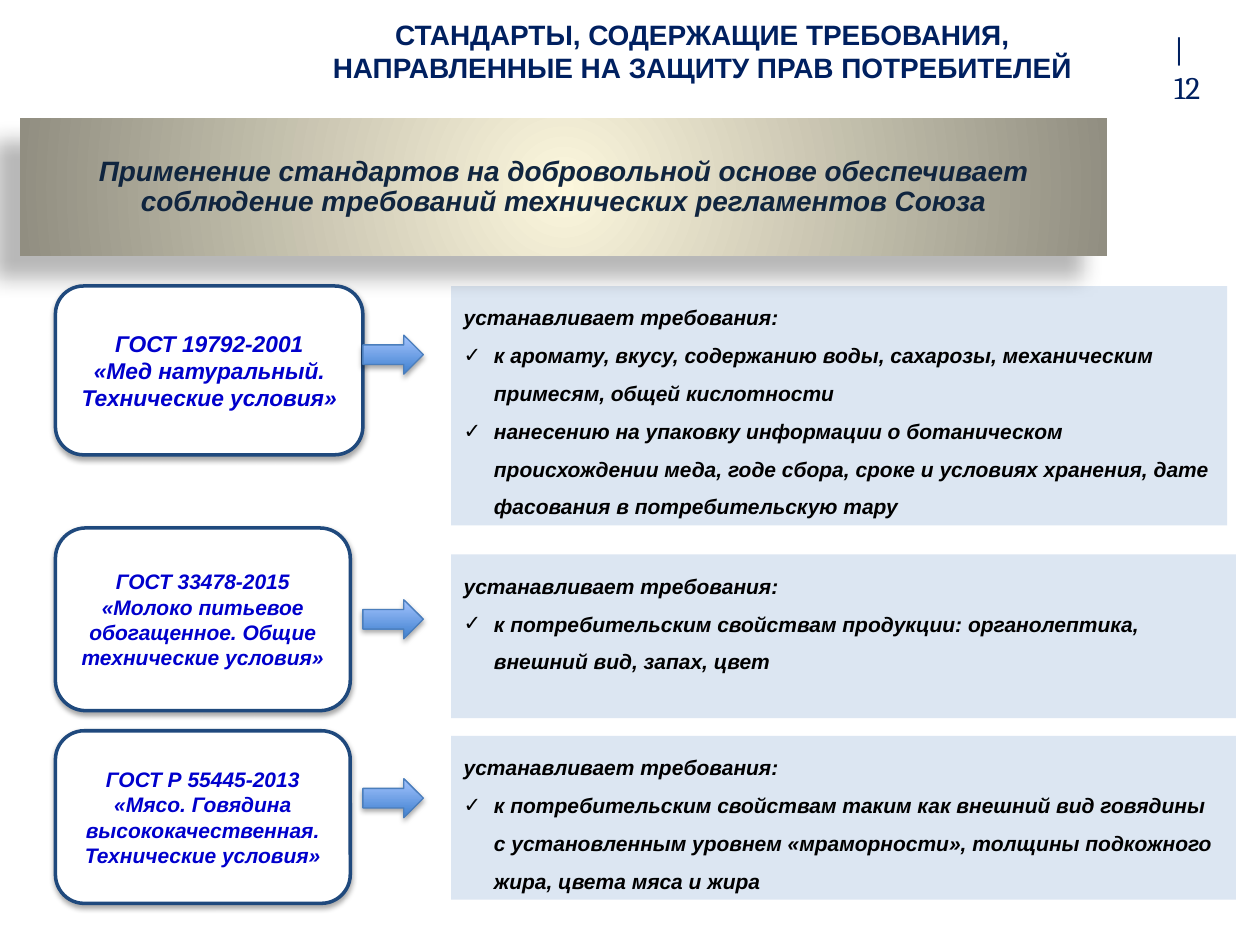
"""Build a slide on standards that protect consumer rights."""
from dataclasses import dataclass

from lxml import etree
from pptx import Presentation
from pptx.dml.color import RGBColor
from pptx.enum import shapes, text
from pptx.oxml import ns
from pptx.util import Inches, Pt


@dataclass(frozen=True)
class Theme:
    """Colours, fonts and type sizes."""
    navy: str = "002060"
    banner_text: str = "10253F"
    banner_stops: tuple[str, str] = ("FCF7DD", "918E81")
    card_fill: str = "FFFFFF"
    card_line: str = "1F497D"
    card_text: str = "0000CC"
    arrow_stops: tuple[str, str] = ("3F80CE", "A4C4FF")
    arrow_line: str = "4B7EBC"
    panel_fill: str = "DCE6F2"
    panel_text: str = "000000"
    font: str = "Arial"
    number_font: str = "Cambria"
    heading_size: int = 16
    number_size: int = 18
    body_size: int = 12


@dataclass(frozen=True)
class Box:
    """Position and size in inches."""
    left: float
    top: float
    width: float
    height: float

    def lengths(self) -> tuple:
        """Return the four lengths for a shape call."""
        return tuple(map(Inches, (self.left, self.top, self.width, self.height)))


@dataclass(frozen=True)
class Shadow:
    """Outer shadow: opacity in percent, lengths in points, angle in degrees."""
    alpha: int
    blur: float
    distance: float
    angle: int


@dataclass(frozen=True)
class Standard:
    """One standard with the requirements it sets."""
    name: list[str]
    name_size: int
    card: Box
    arrow_top: float
    panel: Box
    placeholder: int
    requirements: list[str]


THEME = Theme()
SOFT = Shadow(35, 3.1, 1.8, 90)
DEEP = Shadow(28, 11.8, 19.7, 141)
INTRO = "устанавливает требования:"
STANDARDS = [
    Standard(
        ["ГОСТ 19792-2001", "«Мед натуральный.", "Технические условия»"], 13,
        Box(0.44, 2.27, 2.44, 1.34), 2.66, Box(3.58, 2.27, 6.16, 1.9), 1,
        ["к аромату, вкусу, содержанию воды, сахарозы, механическим примесям, общей кислотности",
         "нанесению на упаковку информации о ботаническом происхождении меда, годе сбора, "
         "сроке и условиях хранения, дате фасования в потребительскую тару"]),
    Standard(
        ["ГОСТ 33478-2015 «Молоко питьевое обогащенное. Общие технические условия»"], 12,
        Box(0.44, 4.19, 2.34, 1.45), 4.76, Box(3.58, 4.4, 6.23, 1.3), 2,
        ["к потребительским свойствам продукции: органолептика, внешний вид, запах, цвет"]),
    Standard(
        ["ГОСТ Р 55445-2013 «Мясо. Говядина высококачественная. Технические условия»"], 12,
        Box(0.44, 5.8, 2.34, 1.37), 6.18, Box(3.58, 5.84, 6.23, 1.3), 3,
        ["к потребительским свойствам таким как внешний вид говядины с установленным уровнем "
         "«мраморности», толщины подкожного жира, цвета мяса и жира"]),
]


def set_bullet(paragraph, bullet: str | None) -> None:
    """Give a paragraph a hanging bullet, or none."""
    properties = paragraph._p.get_or_add_pPr()
    indent = Inches(0.24) if bullet else 0
    properties.set("marL", str(indent))
    properties.set("indent", str(-indent))
    if bullet:
        etree.SubElement(properties, ns.qn("a:buChar"), char=bullet)
    else:
        etree.SubElement(properties, ns.qn("a:buNone"))


def write(shape, lines: list[str], *, size: int, color: str, font: str = THEME.font,
          bold: bool = True, italic: bool = False, align=text.PP_ALIGN.CENTER,
          anchor=text.MSO_ANCHOR.MIDDLE, spacing: float = 1.0,
          bullet: str | None = None) -> None:
    """Fill a shape with paragraphs; a bullet marks all but the first."""
    frame = shape.text_frame
    frame.word_wrap = True
    frame.auto_size = text.MSO_AUTO_SIZE.NONE
    frame.vertical_anchor = anchor
    for index, line in enumerate(lines):
        paragraph = frame.add_paragraph() if index else frame.paragraphs[0]
        paragraph.text = line
        paragraph.alignment = align
        paragraph.line_spacing = spacing
        paragraph.space_before = paragraph.space_after = Pt(0)
        set_bullet(paragraph, bullet if index else None)
        for run in paragraph.runs:
            run.font.name = font
            run.font.size = Pt(size)
            run.font.bold = bold
            run.font.italic = italic
            run.font.color.rgb = RGBColor.from_string(color)


def place(shape, box: Box) -> None:
    """Move and size a placeholder."""
    shape.left, shape.top, shape.width, shape.height = box.lengths()


def fill_solid(shape, color: str) -> None:
    """Fill a shape with one colour."""
    shape.fill.solid()
    shape.fill.fore_color.rgb = RGBColor.from_string(color)


def fill_gradient(shape, colors: tuple[str, str], *, radial: bool = False) -> None:
    """Fill a shape with an upward or a radial gradient."""
    shape.fill.gradient()
    for stop, color in zip(shape.fill.gradient_stops, colors):
        stop.color.rgb = RGBColor.from_string(color)
    if not radial:
        shape.fill.gradient_angle = 90
        return
    gradient = shape._element.spPr.find(ns.qn("a:gradFill"))
    gradient.remove(gradient.find(ns.qn("a:lin")))
    circle = etree.SubElement(gradient, ns.qn("a:path"), path="circle")
    etree.SubElement(circle, ns.qn("a:fillToRect"), dict.fromkeys("ltrb", "50000"))


def add_shape(slide, kind, box: Box, shadow: Shadow, line: str | None = None,
              line_width: float = 1):
    """Add a preset shape with an outline and an outer shadow."""
    shape = slide.shapes.add_shape(kind, *box.lengths())
    if line:
        shape.line.color.rgb = RGBColor.from_string(line)
        shape.line.width = Pt(line_width)
    else:
        shape.line.fill.background()
    shape.shadow.inherit = False
    effects = shape._element.spPr.find(ns.qn("a:effectLst"))
    outer = etree.SubElement(
        effects, ns.qn("a:outerShdw"), blurRad=str(Pt(shadow.blur)),
        dist=str(Pt(shadow.distance)), dir=str(shadow.angle * 60000), rotWithShape="0")
    color = etree.SubElement(outer, ns.qn("a:srgbClr"), val="000000")
    etree.SubElement(color, ns.qn("a:alpha"), val=str(shadow.alpha * 1000))
    return shape


def add_standard(slide, standard: Standard) -> None:
    """Draw a standard's card, arrow and list of requirements."""
    card = add_shape(slide, shapes.MSO_SHAPE.ROUNDED_RECTANGLE, standard.card, SOFT,
                     THEME.card_line, 2)
    fill_solid(card, THEME.card_fill)
    write(card, standard.name, size=standard.name_size, color=THEME.card_text, italic=True)
    arrow = add_shape(slide, shapes.MSO_SHAPE.RIGHT_ARROW,
                      Box(2.88, standard.arrow_top, 0.48, 0.31), SOFT, THEME.arrow_line, 0.75)
    fill_gradient(arrow, THEME.arrow_stops)
    panel = slide.placeholders[standard.placeholder]
    place(panel, standard.panel)
    fill_solid(panel, THEME.panel_fill)
    write(panel, [INTRO, *standard.requirements], size=THEME.body_size,
          color=THEME.panel_text, italic=True, align=text.PP_ALIGN.LEFT,
          anchor=text.MSO_ANCHOR.TOP, spacing=1.5, bullet="✓")


def main() -> None:
    """Build and save the presentation."""
    presentation = Presentation()
    presentation.slide_width, presentation.slide_height = Inches(10), Inches(7.5)
    slide = presentation.slides.add_slide(presentation.slide_layouts.get_by_name("Comparison"))
    spare = slide.placeholders[4]._element
    spare.getparent().remove(spare)

    title = slide.shapes.title
    place(title, Box(1.34, 0.1, 8.47, 0.61))
    write(title, ["СТАНДАРТЫ, СОДЕРЖАЩИЕ ТРЕБОВАНИЯ,", "НАПРАВЛЕННЫЕ НА ЗАЩИТУ ПРАВ ПОТРЕБИТЕЛЕЙ"],
          size=THEME.heading_size, color=THEME.navy)
    number = slide.shapes.add_textbox(*Box(9.22, 0.19, 0.67, 0.42).lengths())
    write(number, ["|\v12"], size=THEME.number_size, color=THEME.navy, font=THEME.number_font,
          bold=False, align=text.PP_ALIGN.LEFT, anchor=text.MSO_ANCHOR.TOP)
    banner = add_shape(slide, shapes.MSO_SHAPE.RECTANGLE, Box(0.16, 0.94, 8.63, 1.09), DEEP)
    fill_gradient(banner, THEME.banner_stops, radial=True)
    write(banner, ["Применение стандартов на добровольной основе обеспечивает "
                   "соблюдение требований технических регламентов Союза"],
          size=THEME.heading_size, color=THEME.banner_text, italic=True, spacing=0.9)
    for standard in STANDARDS:
        add_standard(slide, standard)
    presentation.save("out.pptx")


if __name__ == "__main__":
    main()
